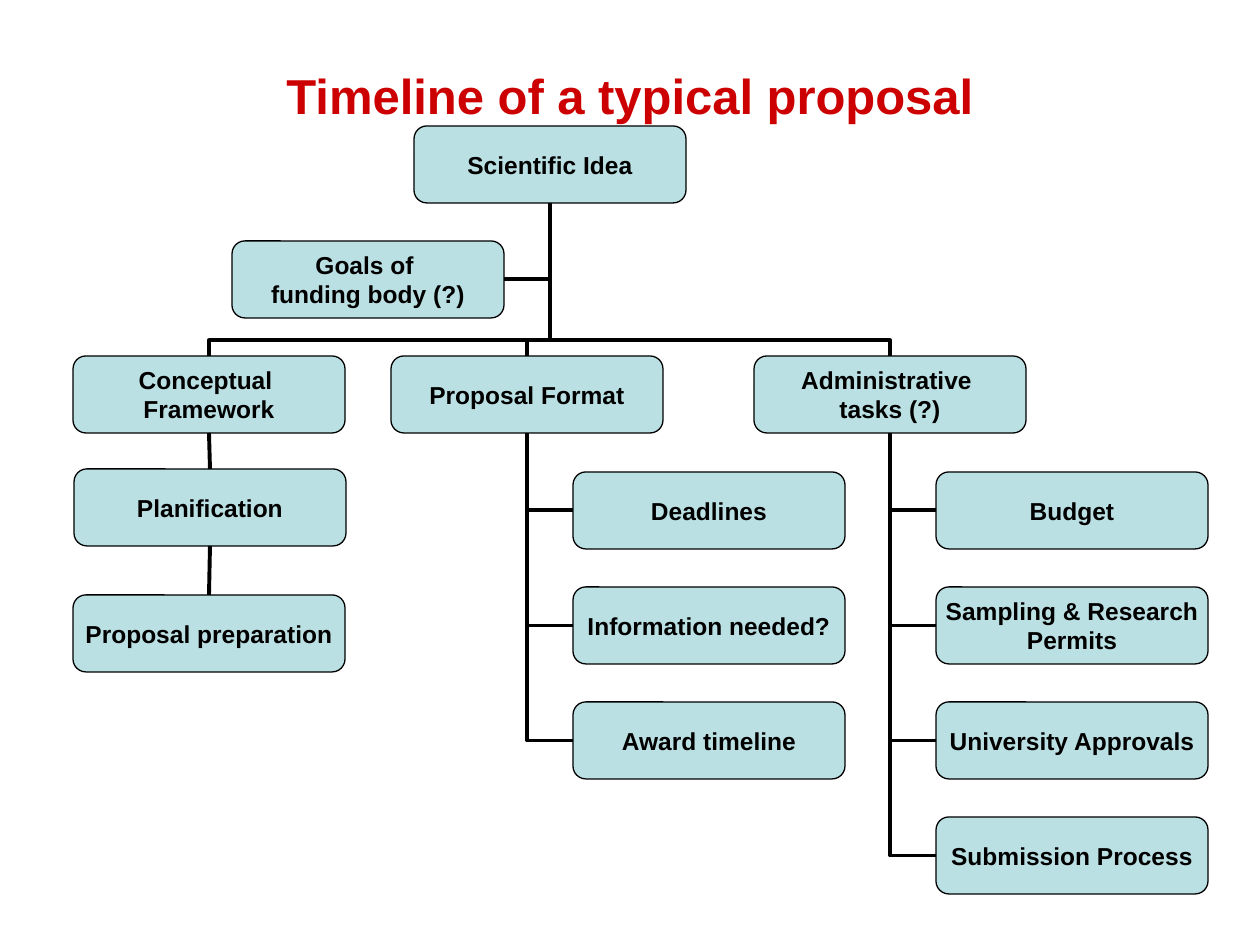
from dataclasses import dataclass

from lxml.etree import SubElement
from pptx import Presentation
from pptx.dml.color import RGBColor
from pptx.enum.shapes import MSO_CONNECTOR as LINE, MSO_SHAPE as SHAPE
from pptx.enum.text import MSO_ANCHOR as ANCHOR, PP_ALIGN as ALIGN
from pptx.oxml.ns import qn
from pptx.util import Emu, Pt

PX = 914400 / 126
TOP, LEFT, BOTTOM, RIGHT = range(4)


def px(n):
    return Emu(round(n * PX))


@dataclass(frozen=True)
class Theme:
    font: str = "Arial"
    title: RGBColor = RGBColor(0xCC, 0x00, 0x00)
    ink: RGBColor = RGBColor(0x00, 0x00, 0x00)
    box: RGBColor = RGBColor(0xBB, 0xE0, 0xE3)
    title_size: Pt = Pt(28)
    box_size: Pt = Pt(14)
    outline: Pt = Pt(0.75)
    link: Pt = Pt(2.25)


class Chart:
    BOX_W, BOX_H = 272, 77

    def __init__(self, slide, theme):
        self.slide, self.theme = slide, theme

    def set_text(self, tf, text, size, color):
        tf.text = text
        tf.vertical_anchor = ANCHOR.MIDDLE
        for p in tf.paragraphs:
            p.alignment = ALIGN.CENTER
            p.font.name, p.font.size, p.font.bold = self.theme.font, size, True
            p.font.color.rgb = color

    def title(self, text, x, y, w, h):
        tf = self.slide.shapes.add_textbox(px(x), px(y), px(w), px(h)).text_frame
        tf.word_wrap = True
        self.set_text(tf, text, self.theme.title_size, self.theme.title)

    def box(self, text, x, y):
        sp = self.slide.shapes.add_shape(
            SHAPE.ROUNDED_RECTANGLE, px(x), px(y), px(self.BOX_W), px(self.BOX_H))
        sp.shadow.inherit = False
        sp.fill.solid()
        sp.fill.fore_color.rgb = self.theme.box
        sp.line.color.rgb = self.theme.ink
        sp.line.width = self.theme.outline
        tf = sp.text_frame
        tf.margin_left = tf.margin_top = tf.margin_right = tf.margin_bottom = 0
        tf.word_wrap = False
        self.set_text(tf, text, self.theme.box_size, self.theme.ink)
        return sp

    def connector(self, kind, x1, y1, x2, y2):
        cxn = self.slide.shapes.add_connector(kind, x1, y1, x2, y2)
        cxn.line.color.rgb = self.theme.ink
        cxn.line.width = self.theme.link
        SubElement(cxn._element.spPr, qn("a:effectLst"))
        return cxn

    def link(self, a, a_side, b, b_side, kind=LINE.STRAIGHT):
        cxn = self.connector(kind, 0, 0, 0, 0)
        cxn.begin_connect(a, a_side)
        cxn.end_connect(b, b_side)
        return cxn

    def corner(self, a, a_side, b):
        """One bend: out of a's side, then up to the bottom of b."""
        cxn = self.link(a, a_side, b, BOTTOM, LINE.ELBOW)
        cxn._element.spPr.find(qn("a:prstGeom")).set("prst", "bentConnector2")

    def branch(self, child, parent):
        """Two bends: up from child, across, and up to parent."""
        x1, y1 = child.left + child.width // 2, child.top
        x2, y2 = parent.left + parent.width // 2, parent.top + parent.height
        # The frame lies on its side and is turned about its centre.
        cx, cy = (x1 + x2) // 2, (y1 + y2) // 2
        half_w, half_h = (y1 - y2) // 2, (x2 - x1) // 2
        cxn = self.connector(LINE.ELBOW, cx - half_w, cy - half_h, cx + half_w, cy + half_h)
        cxn.rotation = 270
        geom = cxn._element.spPr.find(qn("a:prstGeom"))
        guides = geom.find(qn("a:avLst"))
        if guides is None:
            guides = SubElement(geom, qn("a:avLst"))
        SubElement(guides, qn("a:gd"), name="adj1", fmla="val 10200")


def row(n):
    return 126 + round(115.2 * n)


def main():
    prs = Presentation()
    prs.slide_width, prs.slide_height = px(1260), px(945)
    s = prs.slides.add_slide(prs.slide_layouts[6])
    chart = Chart(s, Theme())

    chart.title("Timeline of a typical proposal", 63, 63, 1134, 63)

    # Root and its assistant
    idea = chart.box("Scientific Idea", 414, row(0))
    goals = chart.box("Goals of \vfunding body (?)", 232, row(1))
    chart.corner(goals, RIGHT, idea)

    # Main branches, with their tasks hung to the right
    branches = [
        ("Conceptual \nFramework", 73, []),
        ("Proposal Format", 391, ["Deadlines", "Information needed?", "Award timeline"]),
        ("Administrative \ntasks (?)", 754,
         ["Budget", "Sampling & Research\vPermits", "University Approvals",
          "Submission Process"]),
    ]
    heads = []
    for name, x, tasks in branches:
        head = chart.box(name, x, row(2))
        heads.append(head)
        chart.branch(head, idea)
        for n, task in enumerate(tasks, 3):
            chart.corner(chart.box(task, x + 182, row(n)), LEFT, head)

    # Steps below the conceptual framework
    planning = chart.box("Planification", 74, 469)
    preparation = chart.box("Proposal preparation", 73, 595)
    chart.link(planning, TOP, heads[0], BOTTOM)
    chart.link(preparation, TOP, planning, BOTTOM)

    prs.save("out.pptx")


if __name__ == "__main__":
    main()
